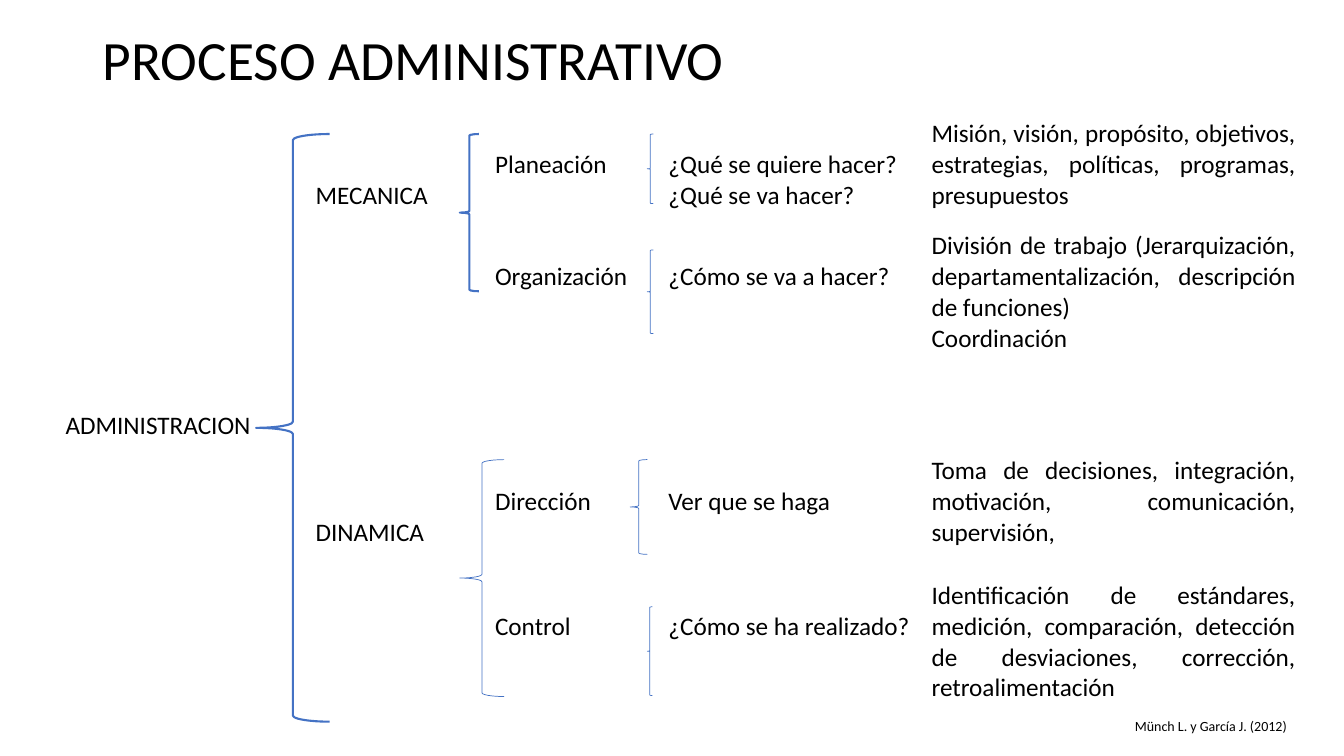
import pptx
import pptx.dml.color
import pptx.enum.shapes
import pptx.enum.text
import pptx.util

PX = 9144  # 100 px to the inch
LINE_HEIGHT = 30.5
CELL_MARGIN = 5
ALIGN = pptx.enum.text.PP_ALIGN


def color(value):
    return pptx.dml.color.RGBColor.from_string(value)


def write(frame, lines, size, align=ALIGN.LEFT):
    """Fill a text frame with one paragraph per line."""
    frame.word_wrap = True
    for index, line in enumerate(lines):
        paragraph = frame.add_paragraph() if index else frame.paragraphs[0]
        paragraph.alignment = align
        run = paragraph.add_run()
        run.text = line
        run.font.size = pptx.util.Pt(size)
        run.font.name = "Calibri"
        run.font.color.rgb = color("000000")


deck = pptx.Presentation()
deck.slide_width = 1333 * PX
deck.slide_height = 750 * PX
slide = deck.slides.add_slide(deck.slide_layouts[6])

title = slide.shapes.add_textbox(92 * PX, 40 * PX, 1150 * PX, 45 * PX).text_frame
title.vertical_anchor = pptx.enum.text.MSO_ANCHOR.MIDDLE
write(title, ["PROCESO ADMINISTRATIVO"], 39.6)
title.paragraphs[0].line_spacing = 0.9

column_widths = [248, 178, 172, 261, 381]
row_heights = [111, 178, 45, 124, 144]
# (row, column): (lines of space above, paragraphs)
entries = {
    (0, 1): (2, ["MECANICA"]),
    (0, 2): (1, ["Planeación"]),
    (0, 3): (1, ["¿Qué se quiere hacer?", "¿Qué se va hacer?"]),
    (0, 4): (0, ["Misión, visión, propósito, objetivos, estrategias, políticas, "
                 "programas, presupuestos"]),
    (1, 2): (1, ["Organización"]),
    (1, 3): (1, ["¿Cómo se va a hacer?"]),
    (1, 4): (0, ["División de trabajo (Jerarquización, departamentalización, "
                 "descripción de funciones)", "Coordinación"]),
    (2, 0): (0, ["ADMINISTRACION"]),
    (3, 1): (2, ["DINAMICA"]),
    (3, 2): (1, ["Dirección"]),
    (3, 3): (1, ["Ver que se haga"]),
    (3, 4): (0, ["Toma de decisiones, integración, motivación, comunicación, "
                 "supervisión,"]),
    (4, 2): (1, ["Control"]),
    (4, 3): (1, ["¿Cómo se ha realizado?"]),
    (4, 4): (0, ["Identificación de estándares, medición, comparación, detección "
                 "de desviaciones, corrección, retroalimentación"]),
}

outline = slide.shapes.add_table(
    len(row_heights), len(column_widths), 55 * PX, 113 * PX,
    sum(column_widths) * PX, sum(row_heights) * PX).table
outline.first_row = False
outline.horz_banding = False
for column, width in zip(outline.columns, column_widths):
    column.width = width * PX
for row, height in zip(outline.rows, row_heights):
    row.height = height * PX
for cell in outline.iter_cells():
    cell.fill.background()
for (row, column), (lines_above, paragraphs) in entries.items():
    cell = outline.cell(row, column)
    cell.margin_top = int((CELL_MARGIN + lines_above * LINE_HEIGHT) * PX)
    write(cell.text_frame, paragraphs, 18,
          ALIGN.JUSTIFY if column == 4 else ALIGN.LEFT)

# left, top, width, height, line width in points
braces = [
    (254, 133, 73, 583, 1.5),  # Administracion
    (456, 133, 19, 156, 1.5),  # Mecanica
    (456, 456, 44, 235, 0.5),  # Dinamica
    (642, 133, 6, 69, 0.5),    # Planeación
    (642, 248, 6, 83, 0.5),    # Organización
    (625, 456, 17, 94, 0.5),   # Dirección
    (642, 602, 5, 88, 0.5),    # Control
]
for left, top, width, height, weight in braces:
    brace = slide.shapes.add_shape(
        pptx.enum.shapes.MSO_SHAPE.LEFT_BRACE,
        left * PX, top * PX, width * PX, height * PX)
    brace.shadow.inherit = False
    brace.fill.background()
    brace.line.color.rgb = color("4472C4")
    brace.line.width = pptx.util.Pt(weight)

citation = slide.shapes.add_textbox(625 * PX, 707 * PX, 661 * PX, 27 * PX).text_frame
write(citation, ["Münch L. y García J. (2012)"], 10, ALIGN.RIGHT)

deck.save("out.pptx")
